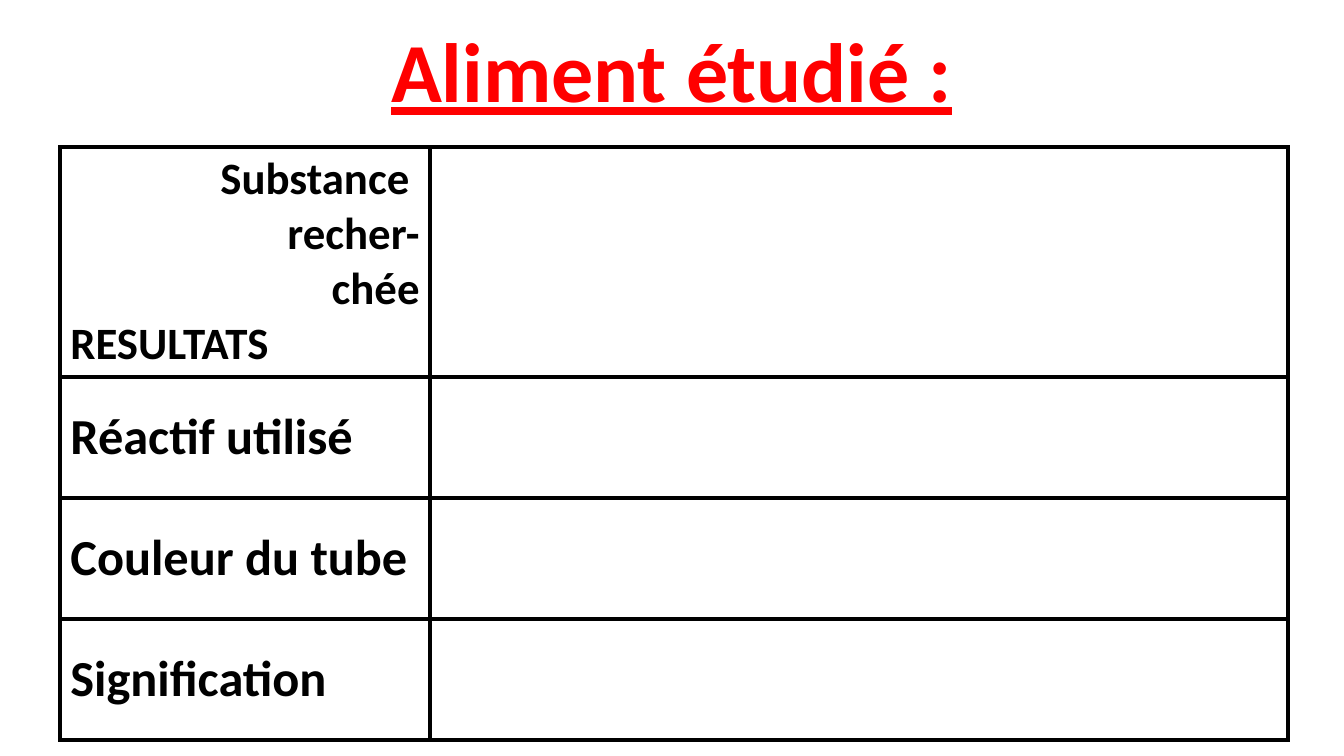
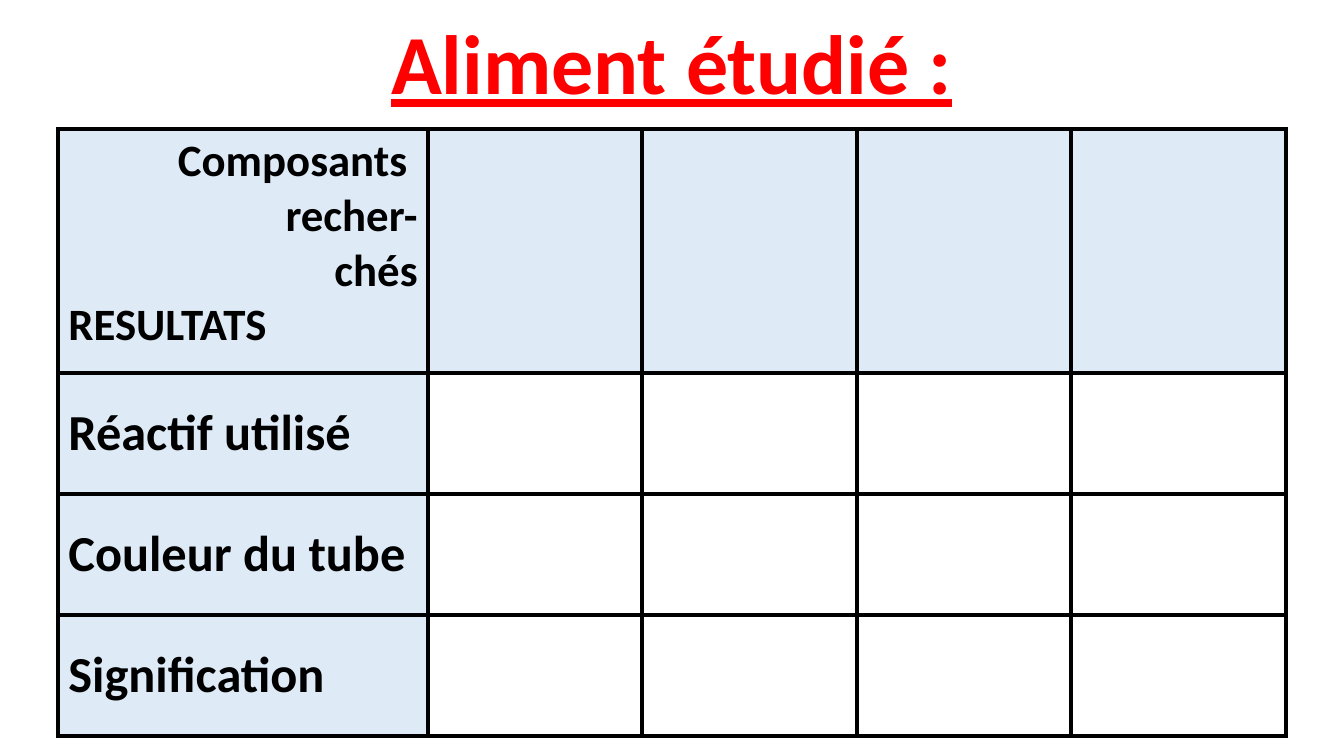
from lxml.etree import SubElement
from pptx import Presentation
from pptx.dml.color import RGBColor
from pptx.enum.text import MSO_ANCHOR, PP_ALIGN
from pptx.oxml.ns import qn
from pptx.util import Cm, Pt

COLORS = {"title": "FF0000", "ink": "000000", "heading": "DEEBF7"}
FONT = "Calibri"
BORDER = Pt(3)
RESULT_LABELS = ["Réactif utilisé", "Couleur du tube", "Signification"]
LABEL_WIDTH = Cm(9.31)
RESULT_HEIGHT = Cm(3.05)
TABLE_WIDTH = Cm(30.93)


def style_paragraph(paragraph, size, color, align=PP_ALIGN.LEFT):
    paragraph.alignment = align
    font = paragraph.font
    font.name = FONT
    font.size = Pt(size)
    font.bold = True
    font.color.rgb = RGBColor.from_string(COLORS[color])


def add_title(slide, left, top, width, height):
    title = slide.shapes.add_textbox(left, top, width, height).text_frame
    title.word_wrap = True
    title.vertical_anchor = MSO_ANCHOR.BOTTOM
    title.text = "Aliment étudié :"
    heading = title.paragraphs[0]
    style_paragraph(heading, 60, "title", PP_ALIGN.CENTER)
    heading.font.underline = True
    heading.line_spacing = 0.9


def add_borders(cell):
    properties = cell._tc.get_or_add_tcPr()
    for side in ("a:lnL", "a:lnR", "a:lnT", "a:lnB"):
        line = SubElement(properties, qn(side), w=str(BORDER))
        fill = SubElement(line, qn("a:solidFill"))
        SubElement(fill, qn("a:srgbClr"), val=COLORS["ink"])


def paint_cell(cell, shaded):
    add_borders(cell)
    if shaded:
        cell.fill.solid()
        cell.fill.fore_color.rgb = RGBColor.from_string(COLORS["heading"])
    else:
        cell.fill.background()


def write_corner(cell, searched_lines):
    cell.text = "\n".join([*searched_lines, "RESULTATS"])
    *searched, results = cell.text_frame.paragraphs
    for paragraph in searched:
        style_paragraph(paragraph, 32, "ink", PP_ALIGN.RIGHT)
    style_paragraph(results, 32, "ink")


def write_label(cell, label):
    cell.text = label
    cell.vertical_anchor = MSO_ANCHOR.MIDDLE
    style_paragraph(cell.text_frame.paragraphs[0], 36, "ink")


def add_results_table(slide, left, top, header_height, searched_lines, substances, shaded):
    row_count = len(RESULT_LABELS) + 1
    height = header_height + RESULT_HEIGHT * len(RESULT_LABELS)
    results = slide.shapes.add_table(
        row_count, substances + 1, left, top, TABLE_WIDTH, height
    ).table
    results.first_row = False
    results.horz_banding = False

    for index, column in enumerate(results.columns):
        column.width = (TABLE_WIDTH - LABEL_WIDTH) // substances if index else LABEL_WIDTH
    for index, row in enumerate(results.rows):
        row.height = RESULT_HEIGHT if index else header_height
        for position, cell in enumerate(row.cells):
            paint_cell(cell, shaded and (index == 0 or position == 0))

    write_corner(results.cell(0, 0), searched_lines)
    for index, label in enumerate(RESULT_LABELS, start=1):
        write_label(results.cell(index, 0), label)


def add_food_slide(deck, title_top, table_left, table_top, header_height,
                   searched_lines, substances, shaded):
    slide = deck.slides.add_slide(deck.slide_layouts[6])
    add_title(slide, Cm(4.23), title_top, Cm(25.4), Cm(2.64))
    add_results_table(slide, table_left, table_top, header_height,
                      searched_lines, substances, shaded)


def main():
    deck = Presentation()
    deck.slide_width = Cm(33.87)
    deck.slide_height = Cm(19.05)
    add_food_slide(deck, Cm(0.53), Cm(1.52), Cm(3.71), Cm(5.79),
                   ["Substance ", "recher-", "chée"], substances=1, shaded=False)
    add_food_slide(deck, Cm(0.33), Cm(1.47), Cm(3.25), Cm(6.15),
                   ["Composants ", "recher-", "chés"], substances=4, shaded=True)
    deck.save("out.pptx")


if __name__ == "__main__":
    main()
